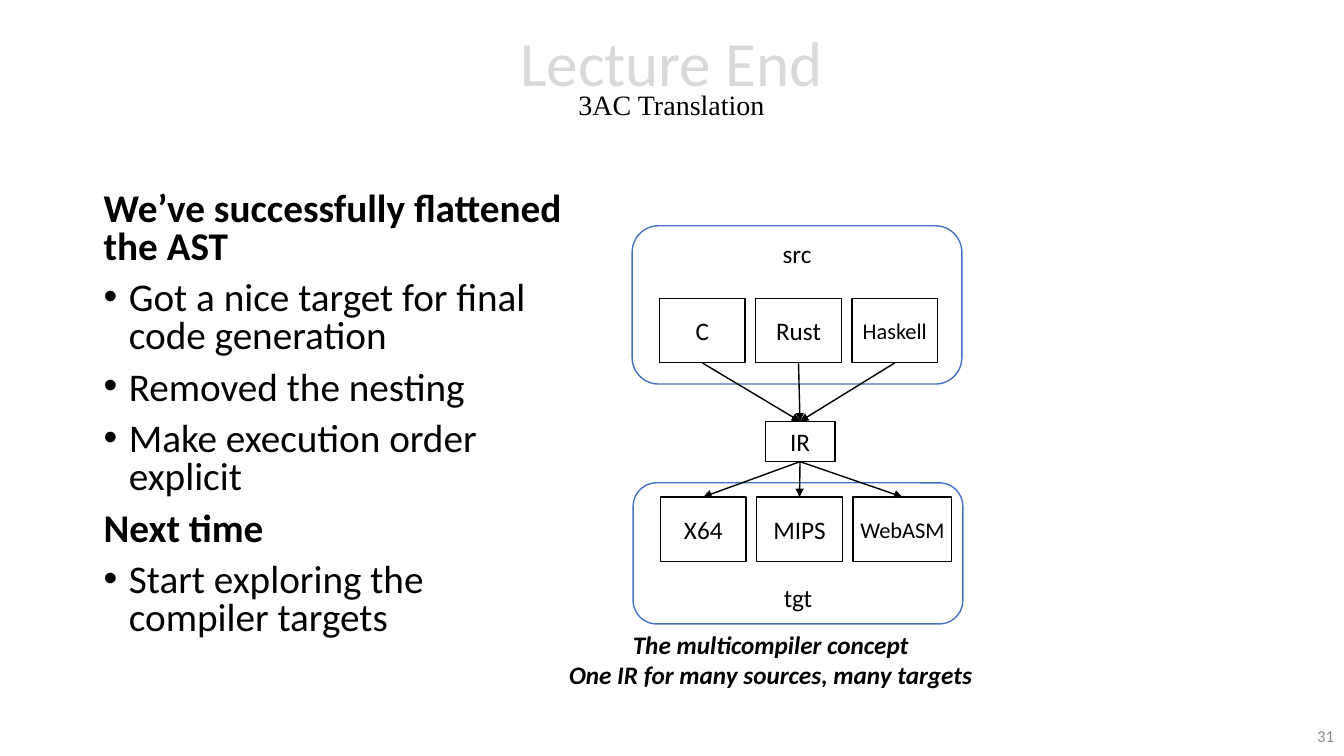
from lxml import etree
from pptx import Presentation
from pptx.dml.color import RGBColor
from pptx.enum.shapes import MSO_CONNECTOR, MSO_SHAPE
from pptx.enum.text import MSO_ANCHOR, PP_ALIGN
from pptx.oxml.ns import qn
from pptx.util import Inches, Pt

RECT = MSO_SHAPE.RECTANGLE
ROUNDED = MSO_SHAPE.ROUNDED_RECTANGLE
STRAIGHT = MSO_CONNECTOR.STRAIGHT
TOP, MIDDLE, BOTTOM = MSO_ANCHOR.TOP, MSO_ANCHOR.MIDDLE, MSO_ANCHOR.BOTTOM
LEFT, CENTER, RIGHT = PP_ALIGN.LEFT, PP_ALIGN.CENTER, PP_ALIGN.RIGHT
TOP_SITE, BOTTOM_SITE = 0, 2
BLACK, WHITE, BLUE = "000000", "FFFFFF", "4472C4"
LIGHT_GREY, GREY = "D9D9D9", "8C8C8C"
BOX_STEP = 0.955

SUMMARY = [
    ("We’ve successfully flattened the AST", True),
    ("Got a nice target for final code generation", False),
    ("Removed the nesting", False),
    ("Make execution order explicit", False),
    ("Next time", True),
    ("Start exploring the compiler targets", False),
]
SOURCES = [("C", 0.85, 18), ("Rust", 0.85, 18), ("Haskell", 0.85, 16)]
TARGETS = [("X64", 0.85, 18), ("MIPS", 0.85, 18), ("WebASM", 0.98, 16)]


def rgb(color):
    return RGBColor.from_string(color)


def style_run(r, size, color=BLACK, font="Calibri", bold=False, italic=False):
    r.font.name = font
    r.font.size = Pt(size)
    r.font.color.rgb = rgb(color)
    r.font.bold = bold
    r.font.italic = italic


def style_text(tf, size, align, anchor=TOP, **style):
    tf.vertical_anchor = anchor
    for p in tf.paragraphs:
        p.alignment = align
        for r in p.runs:
            style_run(r, size, **style)


def add_text(s, text, left, top, width, height, wrap=True):
    sp = s.shapes.add_textbox(
        Inches(left), Inches(top), Inches(width), Inches(height))
    tf = sp.text_frame
    tf.word_wrap = wrap
    tf.text = text
    return tf


def add_box(s, text, left, top, width, height, size=18, kind=RECT,
            line=BLACK, anchor=MIDDLE):
    sp = s.shapes.add_shape(
        kind, Inches(left), Inches(top), Inches(width), Inches(height))
    sp.shadow.inherit = False
    sp.fill.solid()
    sp.fill.fore_color.rgb = rgb(WHITE)
    sp.line.color.rgb = rgb(line)
    sp.line.width = Pt(1)
    sp.text_frame.text = text
    style_text(sp.text_frame, size, CENTER, anchor)
    return sp


def add_languages(s, languages, left, top):
    return [add_box(s, name, left + i * BOX_STEP, top, width, 0.64, size)
            for i, (name, width, size) in enumerate(languages)]


def add_arrow(s, start, end):
    c = s.shapes.add_connector(STRAIGHT, 0, 0, 0, 0)
    c.begin_connect(start, BOTTOM_SITE)
    c.end_connect(end, TOP_SITE)
    c.line.color.rgb = rgb(BLACK)
    c.line.width = Pt(1)
    etree.SubElement(c.line._get_or_add_ln(), qn("a:tailEnd"), type="triangle")
    etree.SubElement(c._element.spPr, qn("a:effectLst"))


def add_bullet(p):
    pPr = p._p.get_or_add_pPr()
    pPr.set("marL", str(Inches(0.25)))
    pPr.set("indent", str(Inches(-0.25)))
    etree.SubElement(pPr, qn("a:buFont"), typeface="Arial")
    etree.SubElement(pPr, qn("a:buChar"), char="•")


def add_title(s):
    tf = add_text(s, "Lecture End\v3AC Translation", 2.35, 0.09, 8.62, 1.45)
    style_text(tf, 45, CENTER, MIDDLE, color=LIGHT_GREY)
    p = tf.paragraphs[0]
    p.line_spacing = 0.7
    style_run(p.runs[1], 20, font="Times New Roman")


def add_summary(s):
    text = "\n".join(line for line, _ in SUMMARY)
    tf = add_text(s, text, 0.93, 1.86, 4.79, 4.76)
    style_text(tf, 28, LEFT)
    for p, (_, heading) in zip(tf.paragraphs, SUMMARY):
        p.line_spacing = 0.8
        p.space_before = Pt(10)
        if heading:
            p.runs[0].font.bold = True
        else:
            add_bullet(p)


def add_diagram(s):
    add_box(s, "tgt", 6.28, 4.79, 3.27, 1.4, kind=ROUNDED, line=BLUE,
            anchor=BOTTOM)
    add_box(s, "src", 6.27, 2.24, 3.27, 1.57, kind=ROUNDED, line=BLUE,
            anchor=TOP)
    sources = add_languages(s, SOURCES, 6.54, 2.96)
    targets = add_languages(s, TARGETS, 6.55, 4.93)
    webasm = targets[-1].text_frame
    webasm.margin_left = webasm.margin_right = 0
    ir = add_box(s, "IR", 7.59, 4.18, 0.69, 0.4)
    for source in sources:
        add_arrow(s, source, ir)
    for target in targets:
        add_arrow(s, ir, target)
    caption = "The multicompiler concept\nOne IR for many sources, many targets"
    tf = add_text(s, caption, 5.53, 6.19, 4.23, 0.71, wrap=False)
    style_text(tf, 18, CENTER, bold=True, italic=True)


def main():
    prs = Presentation()
    prs.slide_width = Inches(13.33)
    prs.slide_height = Inches(7.5)
    s = prs.slides.add_slide(prs.slide_layouts[6])
    add_title(s)
    add_summary(s)
    add_diagram(s)
    number = add_text(s, "31", 10.33, 7.1, 3, 0.4)
    style_text(number, 12, RIGHT, MIDDLE, color=GREY)
    prs.save("out.pptx")


if __name__ == "__main__":
    main()
